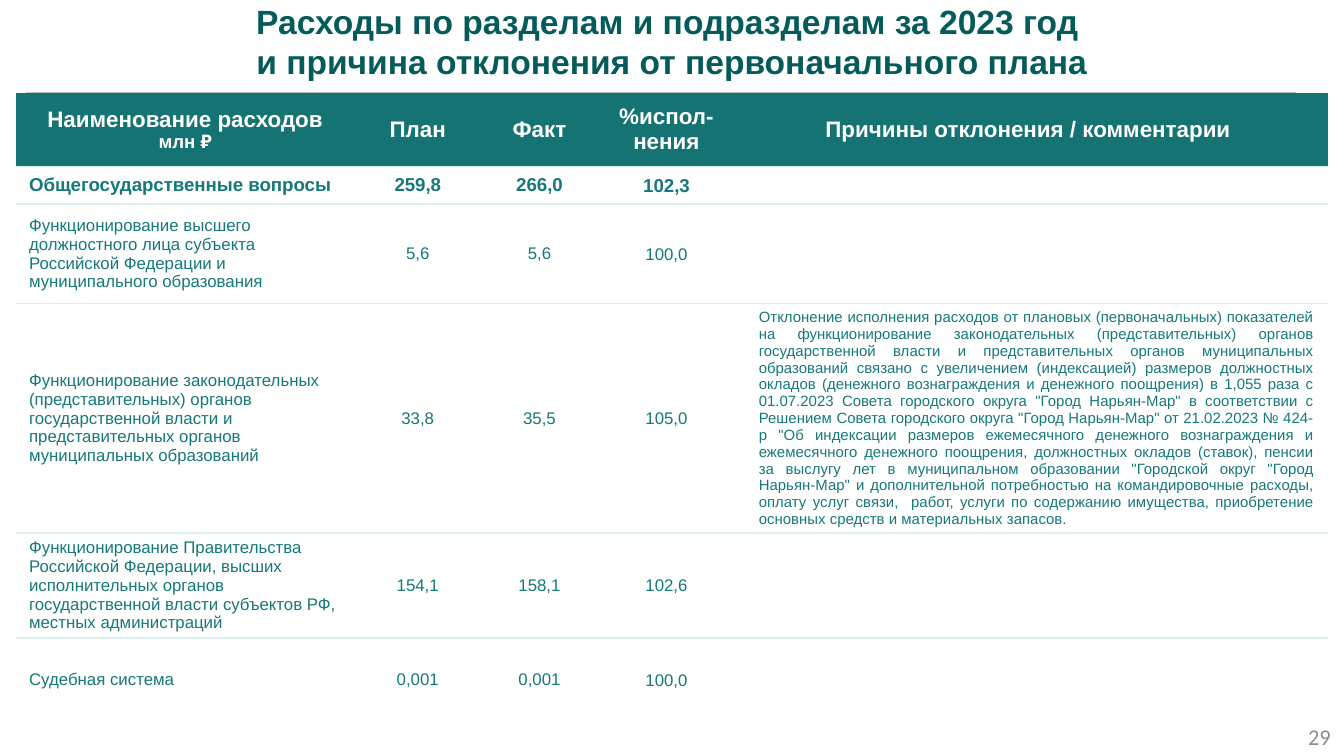
from lxml.etree import SubElement
from pptx import Presentation
from pptx.dml.color import RGBColor
from pptx.enum.shapes import MSO_CONNECTOR
from pptx.enum.text import MSO_ANCHOR as ANCHOR, PP_ALIGN as ALIGN
from pptx.oxml.ns import qn
from pptx.util import Cm, Pt

TITLE = ["Расходы по разделам и подразделам за 2023 год ",
         "и причина отклонения от первоначального плана"]
HEADER = ["Наименование расходов ", "План", "Факт", "%испол-нения",
          "Причины отклонения / комментарии "]
UNIT = "млн ₽"
REASON = [
    "Отклонение исполнения расходов от плановых (первоначальных) показателей на",
    "функционирование законодательных (представительных) органов государственной власти и",
    "представительных органов муниципальных образований связано с увеличением (индексацией)",
    "размеров должностных окладов (денежного вознаграждения и денежного поощрения) в 1,055 раза",
    "с 01.07.2023 Совета городского округа \"Город Нарьян-Мар\" в соответствии с Решением Совета",
    "городского округа \"Город Нарьян-Мар\" от 21.02.2023 № 424-р \"Об индексации размеров",
    "ежемесячного денежного вознаграждения и ежемесячного денежного поощрения, должностных",
    "окладов (ставок), пенсии за выслугу лет в муниципальном образовании \"Городской округ",
    "\"Город Нарьян-Мар\" и дополнительной потребностью на командировочные расходы, оплату услуг",
    "связи,  работ, услуги по содержанию имущества, приобретение основных средств и материальных",
    "запасов. ",
]
ROWS = [
    ("Общегосударственные вопросы", "259,8", "266,0", "102,3", ""),
    ("Функционирование высшего должностного лица субъекта Российской Федерации и "
     "муниципального образования", "5,6", "5,6", "100,0", ""),
    ("Функционирование законодательных (представительных) органов государственной власти и "
     "представительных органов муниципальных образований",
     "33,8", "35,5", "105,0", " ".join(REASON)),
    ("Функционирование Правительства Российской Федерации, высших исполнительных органов "
     "государственной власти субъектов РФ, местных администраций",
     "154,1", "158,1", "102,6", ""),
    ("Судебная система", "0,001", "0,001", "100,0", ""),
]
COL_WIDTHS = [6.4, 2.39, 2.21, 2.59, 11.2]
ROW_HEIGHTS = [1.4, 0.71, 1.88, 4.19, 1.8, 1.6]
NAME, PERCENT, COMMENT = 0, 3, 4
NO_STYLE = "{2D5ABB26-0587-4C30-8999-92F81FD0307C}"
WHITE, TEAL, HEADER_FILL, RULE = "FFFFFF", "167878", "167373", "DCF0F0"


def rgb(color):
    return RGBColor.from_string(color)


def add_run(p, text, size, color, bold=False, font="Arial"):
    r = p.add_run()
    r.text = text
    r.font.name, r.font.size, r.font.bold = font, Pt(size), bold
    r.font.color.rgb = rgb(color)


def set_insets(cell, x, top, bottom):
    cell.margin_left = cell.margin_right = Cm(x)
    cell.margin_top, cell.margin_bottom = Cm(top), Cm(bottom)


def rule_below(cell):
    ln = SubElement(cell._tc.get_or_add_tcPr(), qn("a:lnB"), w=str(Pt(1)))
    fill = SubElement(ln, qn("a:solidFill"))
    SubElement(fill, qn("a:srgbClr"), val=RULE)


def fill_cell(cell, row, col, text):
    header = row == 0
    cell.vertical_anchor = ANCHOR.MIDDLE
    if col == PERCENT and not header:
        set_insets(cell, 0.02, 0.02, 0)
    else:
        set_insets(cell, 0.25, 0.1, 0.1)
    if row < len(ROWS):
        rule_below(cell)
    if header:
        cell.fill.solid()
        cell.fill.fore_color.rgb = rgb(HEADER_FILL)
    else:
        cell.fill.background()

    p = cell.text_frame.paragraphs[0]
    if not text:
        SubElement(p._p, qn("a:endParaRPr"), sz="800")
        return
    if header:
        p.alignment = ALIGN.CENTER
        add_run(p, text, 12, WHITE, True)
        if col == NAME:
            add_run(p, UNIT, 10, WHITE, True)
    elif col == COMMENT:
        p.alignment = ALIGN.JUSTIFY
        p._p.get_or_add_pPr().set("marL", str(Cm(0.2)))
        add_run(p, text, 8, TEAL)
    else:
        p.alignment = ALIGN.LEFT if col == NAME else ALIGN.CENTER
        total = row == 1
        add_run(p, text, 10 if total else 9, TEAL, total)


prs = Presentation()
prs.slide_width, prs.slide_height = Cm(25.4), Cm(14.29)
s = prs.slides.add_slide(prs.slide_layouts[5])

line = s.shapes.add_connector(MSO_CONNECTOR.STRAIGHT, Cm(0.5), Cm(1.75), Cm(24.5), Cm(1.75))
line.line.color.rgb = rgb("BFBFBF")
line.line.width = Pt(0.75)
SubElement(line._element.spPr, qn("a:effectLst"))

frame = s.shapes.add_table(len(ROW_HEIGHTS), len(COL_WIDTHS), Cm(0.3), Cm(1.75),
                           Cm(sum(COL_WIDTHS)), Cm(sum(ROW_HEIGHTS)))
table = frame.table
table.horz_banding = False
table._tbl.tblPr.find(qn("a:tableStyleId")).text = NO_STYLE
for column, width in zip(table.columns, COL_WIDTHS):
    column.width = Cm(width)
for table_row, height in zip(table.rows, ROW_HEIGHTS):
    table_row.height = Cm(height)
for i, texts in enumerate([HEADER, *ROWS]):
    for j, text in enumerate(texts):
        fill_cell(table.cell(i, j), i, j, text)

title = s.shapes.title
title.left, title.top, title.width, title.height = Cm(0), Cm(0), Cm(25.4), Cm(1.55)
tf = title.text_frame
tf.vertical_anchor = ANCHOR.MIDDLE
for i, text in enumerate(TITLE):
    p = tf.add_paragraph() if i else tf.paragraphs[0]
    p.alignment = ALIGN.CENTER
    add_run(p, text, 18, "055A5A", True)

number = s.shapes.add_textbox(Cm(19.48), Cm(13.54), Cm(5.92), Cm(0.75))
tf = number.text_frame
tf.word_wrap = True
tf.vertical_anchor = ANCHOR.MIDDLE
p = tf.paragraphs[0]
p.alignment = ALIGN.RIGHT
add_run(p, "29", 12, "8C8C8C", font="Calibri")

prs.save("out.pptx")
